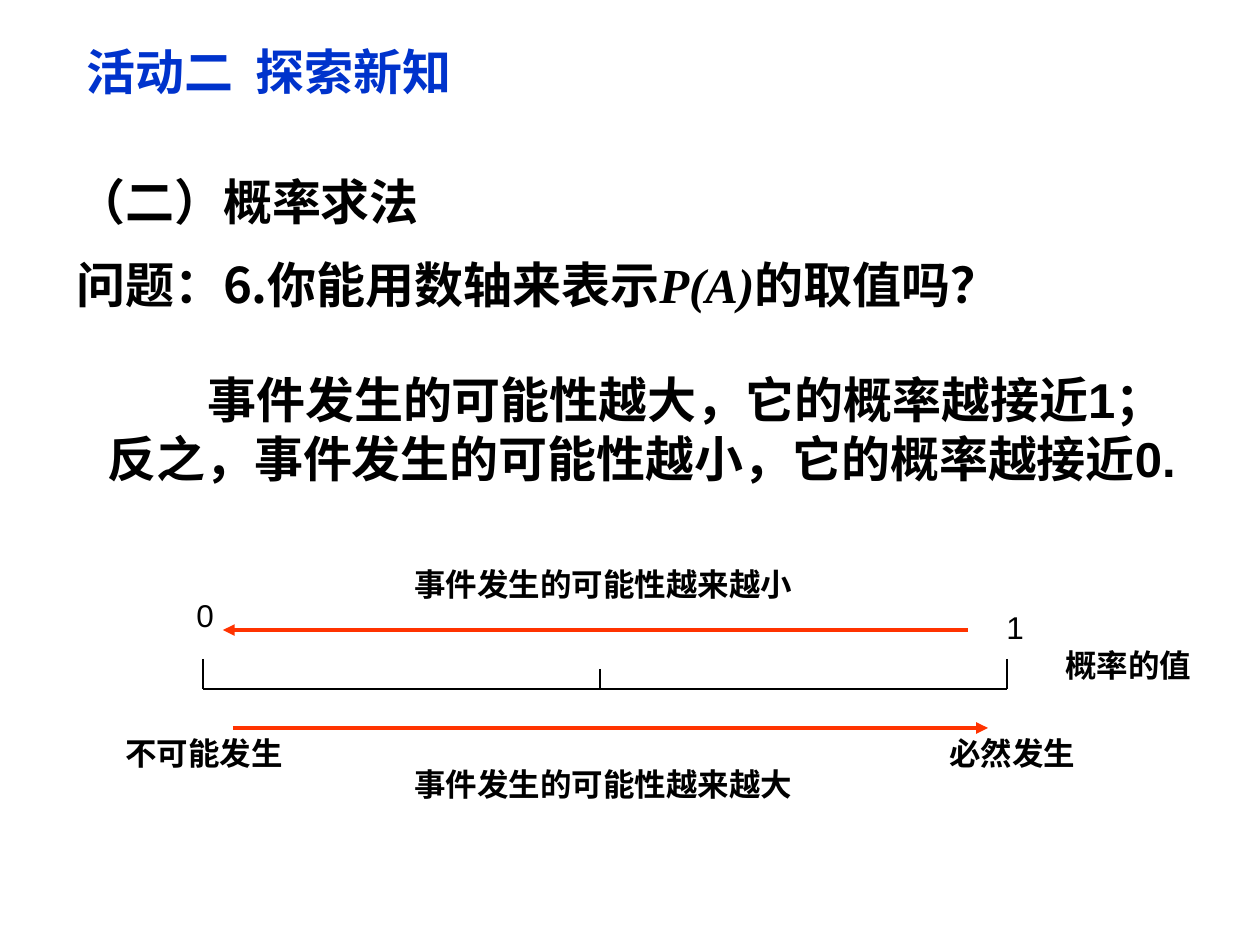
"""Build the slide that shows the values of P(A) on a number line."""
import pptx
import pptx.dml.color
import pptx.enum.shapes
import pptx.enum.text
import pptx.oxml.ns
import pptx.util
from lxml import etree

PX = 914400 / 126
SANS, CJK, SERIF = "Arial", "Noto Sans CJK SC", "Times New Roman"
BLACK, BLUE, RED = "000000", "0033CC", "FF3300"
qn = pptx.oxml.ns.qn


def px(*lengths):
    return [pptx.util.Emu(round(length * PX)) for length in lengths]


def rgb(value):
    return pptx.dml.color.RGBColor.from_string(value)


deck = pptx.Presentation()
deck.slide_width, deck.slide_height = px(1260, 945)
slide = deck.slides.add_slide(deck.slide_layouts[6])

axis_left, axis_right, axis_y = 203, 1007, 689
strokes = [
    (axis_left, axis_y, axis_right, axis_y, BLACK, 0.75),
    (axis_left, 659, axis_left, axis_y, BLACK, 0.75),
    (axis_right, 659, axis_right, axis_y, BLACK, 0.75),
    (600, 669, 600, axis_y, BLACK, 0.75),
    (968, 630, 223, 630, RED, 2.25),
    (233, 728, 988, 728, RED, 2.25),
]
for x1, y1, x2, y2, color, weight in strokes:
    stroke = slide.shapes.add_connector(
        pptx.enum.shapes.MSO_CONNECTOR.STRAIGHT, *px(x1, y1, x2, y2))
    stroke.line.color.rgb = rgb(color)
    stroke.line.width = pptx.util.Pt(weight)
    if color == RED:
        etree.SubElement(stroke.line._get_or_add_ln(), qn("a:tailEnd"), type="triangle")
    etree.SubElement(stroke._element.spPr, qn("a:effectLst"))

label = {"size": pptx.util.Pt(18), "name": SANS, "bold": True}
number = {**label, "bold": False}
body = {**label, "size": pptx.util.Pt(28)}
heading = {**body, "name": CJK}
variable = {**body, "name": SERIF, "italic": True}

texts = [
    ((184, 590, 43, 50), False, BLACK, 0, [[("0", number)]]),
    ((994, 602, 43, 50), False, BLACK, 0, [[("1", number)]]),
    ((402, 759, 403, 50), False, BLACK, 0, [[("事件发生的可能性越来越大", label)]]),
    ((402, 559, 403, 50), False, BLACK, 0, [[("事件发生的可能性越来越小", label)]]),
    ((113, 728, 183, 50), False, BLACK, 0, [[("不可能发生", label)]]),
    ((937, 728, 151, 50), False, BLACK, 0, [[("必然发生", label)]]),
    ((1053, 640, 151, 50), False, BLACK, 0, [[("概率的值", label)]]),
    ((95, 363, 1111, 130), True, BLACK, 100,
     [[("事件发生的可能性越大，它的概率越接近1；反之，事件发生的可能性越小，它的概率越接近0.", body)]]),
    ((74, 35, 701, 72), True, BLUE, 0, [[("活动二  探索新知", heading)]]),
    ((64, 165, 1162, 160), True, BLACK, 0,
     [[("（二）概率求法", heading)],
      [("问题：6.你能用数轴来表示", heading), ("P(A)", variable), ("的取值吗？", heading)]]),
]
for box, wrap, color, indent, paragraphs in texts:
    frame = slide.shapes.add_textbox(*px(*box)).text_frame
    frame.word_wrap = wrap
    frame.auto_size = pptx.enum.text.MSO_AUTO_SIZE.SHAPE_TO_FIT_TEXT
    for index, runs in enumerate(paragraphs):
        paragraph = frame.add_paragraph() if index else frame.paragraphs[0]
        if index:
            paragraph.space_before = pptx.util.Pt(14)
        if indent:
            paragraph._p.get_or_add_pPr().set("indent", str(px(indent)[0]))
        for words, style in runs:
            run = paragraph.add_run()
            run.text = words
            for key, value in style.items():
                setattr(run.font, key, value)
            run.font.color.rgb = rgb(color)
            etree.SubElement(run._r.get_or_add_rPr(), qn("a:ea"), typeface=CJK)

deck.save("out.pptx")
